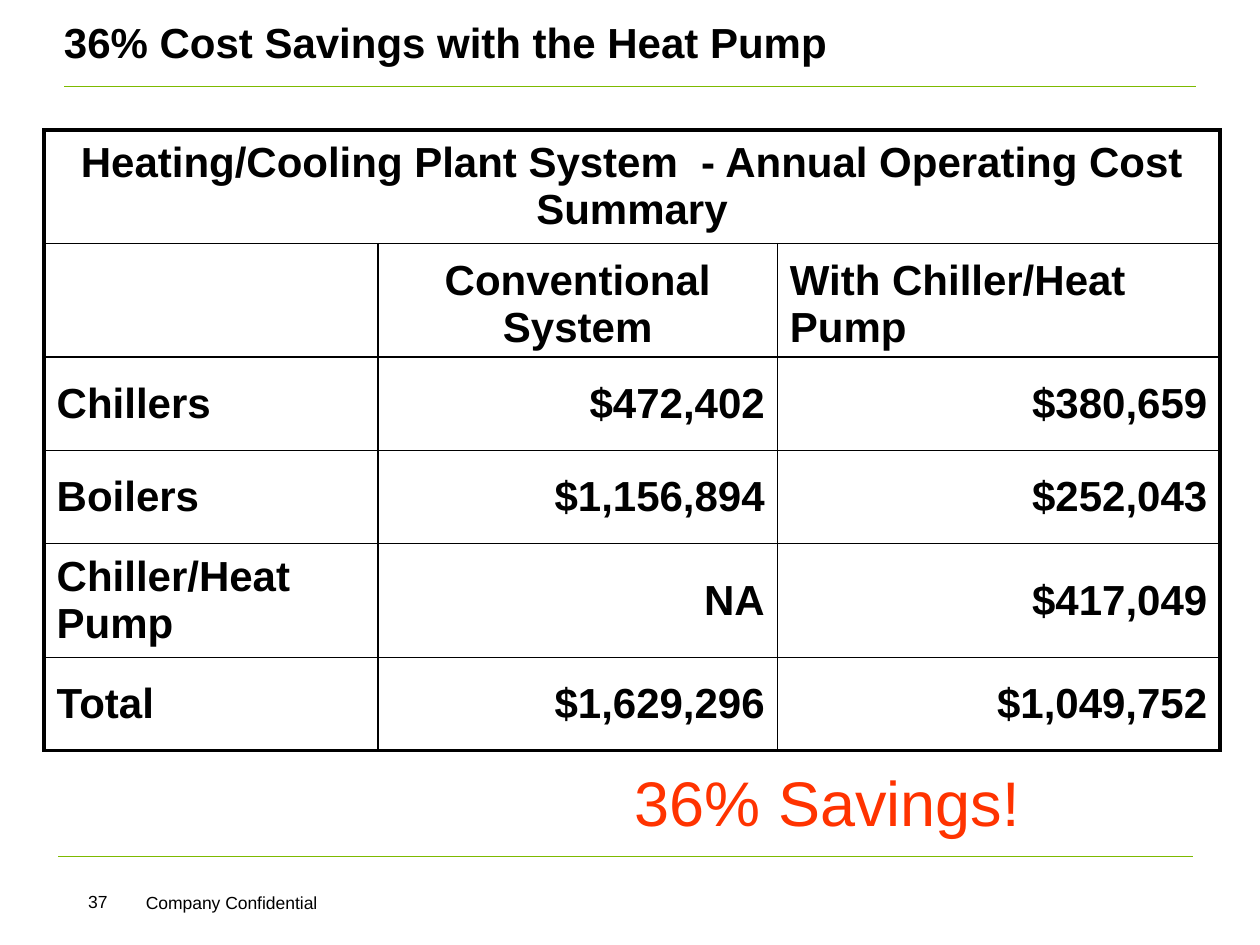
import dataclasses

import pptx
import pptx.dml.color
import pptx.enum.shapes
import pptx.enum.text
import pptx.oxml
import pptx.oxml.ns
import pptx.util

Cm, Pt = pptx.util.Cm, pptx.util.Pt
Align, Anchor = pptx.enum.text.PP_ALIGN, pptx.enum.text.MSO_ANCHOR


@dataclasses.dataclass(frozen=True)
class Theme:
    font: str = "Arial"
    ink: str = "000000"
    rule: str = "7DBA00"
    accent: str = "FF3300"
    heading: int = 24
    callout: int = 36
    footer: int = 10
    rule_width: float = 0.75
    inner_border: float = 1
    outer_border: float = 2.25


@dataclasses.dataclass(frozen=True)
class Box:
    """A region of the slide, in centimetres."""
    left: float
    top: float
    width: float
    height: float


THEME = Theme()
COLUMN_WIDTHS = (6.73, 8.05, 8.92)
TALL_ROW, SHORT_ROW = 2.29, 1.88
ROW_HEIGHTS = (TALL_ROW, TALL_ROW, SHORT_ROW, SHORT_ROW, TALL_ROW, SHORT_ROW)
COSTS = (
    ("Heating/Cooling Plant System  - Annual Operating Cost Summary", "", ""),
    ("", "Conventional System", "With Chiller/Heat Pump"),
    ("Chillers", "$472,402", "$380,659"),
    ("Boilers", "$1,156,894", "$252,043"),
    ("Chiller/Heat Pump", "NA", "$417,049"),
    ("Total", "$1,629,296", "$1,049,752"),
)


def style_paragraph(paragraph, size, color=THEME.ink, bold=False, align=Align.LEFT):
    paragraph.alignment = align
    font_format = {"name": THEME.font, "size": Pt(size), "bold": bold}
    for name, value in font_format.items():
        setattr(paragraph.font, name, value)
    paragraph.font.color.rgb = pptx.dml.color.RGBColor.from_string(color)


def add_text(slide, box, text, size, **style):
    shape = slide.shapes.add_textbox(
        Cm(box.left), Cm(box.top), Cm(box.width), Cm(box.height))
    frame = shape.text_frame
    frame.word_wrap = True
    frame.text = text
    style_paragraph(frame.paragraphs[0], size, **style)


def add_rule(slide, left, right, y):
    line = slide.shapes.add_connector(
        pptx.enum.shapes.MSO_CONNECTOR.STRAIGHT, Cm(left), Cm(y), Cm(right), Cm(y))
    line.line.color.rgb = pptx.dml.color.RGBColor.from_string(THEME.rule)
    line.line.width = Pt(THEME.rule_width)
    line._element.spPr.append(pptx.oxml.parse_xml(
        f"<a:effectLst {pptx.oxml.ns.nsdecls('a')}/>"))


def set_borders(cell, widths):
    """Draw the four borders; they must come before the cell's fill."""
    properties = cell._tc.get_or_add_tcPr()
    for position, (side, width) in enumerate(widths.items()):
        properties.insert(position, pptx.oxml.parse_xml(
            f'<a:ln{side} {pptx.oxml.ns.nsdecls("a")} w="{Pt(width)}">'
            f'<a:solidFill><a:srgbClr val="{THEME.ink}"/></a:solidFill></a:ln{side}>'))


def cell_layout(row, column):
    """Alignment and anchor that follow from a cell's place in the table."""
    if row == 0:
        return Align.CENTER, Anchor.MIDDLE
    if row == 1:
        return (Align.CENTER if column == 1 else Align.LEFT), Anchor.BOTTOM
    return (Align.RIGHT if column else Align.LEFT), Anchor.MIDDLE


def add_header(slide, box):
    add_text(slide, Box(box.left + 1.04, box.top + 0.2, 24.36, 1.9),
             "36% Cost Savings with the Heat Pump", THEME.heading, bold=True)
    add_rule(slide, box.left + 1.3, box.left + 24.1, box.top + 1.75)


def add_cost_table(slide, box):
    table = slide.shapes.add_table(
        len(ROW_HEIGHTS), len(COLUMN_WIDTHS),
        Cm(box.left), Cm(box.top), Cm(box.width), Cm(box.height)).table
    for name in ("first_row", "horz_banding"):
        setattr(table, name, False)
    for column, width in zip(table.columns, COLUMN_WIDTHS):
        column.width = Cm(width)
    for row, height in zip(table.rows, ROW_HEIGHTS):
        row.height = Cm(height)
    table.cell(0, 0).merge(table.cell(0, len(COLUMN_WIDTHS) - 1))

    last_row, last_column = len(ROW_HEIGHTS) - 1, len(COLUMN_WIDTHS) - 1
    for row, values in enumerate(COSTS):
        for column, value in enumerate(values):
            cell = table.cell(row, column)
            align, cell.vertical_anchor = cell_layout(row, column)
            cell.text = value
            style_paragraph(cell.text_frame.paragraphs[0], THEME.heading,
                            bold=True, align=align)
            cell.fill.background()
            outer = {
                "L": column == 0 or row == 0,
                "R": column == last_column or row == 0,
                "T": row == 0,
                "B": row == last_row,
            }
            set_borders(cell, {
                side: THEME.outer_border if is_outer else THEME.inner_border
                for side, is_outer in outer.items()})


def add_footer(slide, box):
    add_rule(slide, box.left + 1.17, box.left + 24.05, box.top)
    add_text(slide, Box(box.left + 1.3, box.top + 0.56, 1.35, 0.79),
             "37", THEME.footer, align=Align.CENTER)
    add_text(slide, Box(box.left + 2.69, box.top + 0.59, 8.51, 0.69),
             "Company Confidential", THEME.footer)


def main():
    presentation = pptx.Presentation()
    presentation.slide_width, presentation.slide_height = Cm(25.4), Cm(19.05)
    slide = presentation.slides.add_slide(presentation.slide_layouts[6])

    # Title and rule
    add_header(slide, Box(0, 0, 25.4, 2.1))
    # Annual costs of both systems
    add_cost_table(slide, Box(0.89, 2.62, sum(COLUMN_WIDTHS), sum(ROW_HEIGHTS)))
    # Savings callout
    add_text(slide, Box(12.55, 15.27, 11.07, 1.78), "36% Savings!",
             THEME.callout, color=THEME.accent)
    # Rule, page number and notice
    add_footer(slide, Box(0, 17.27, 25.4, 1.78))

    presentation.save("out.pptx")


if __name__ == "__main__":
    main()
